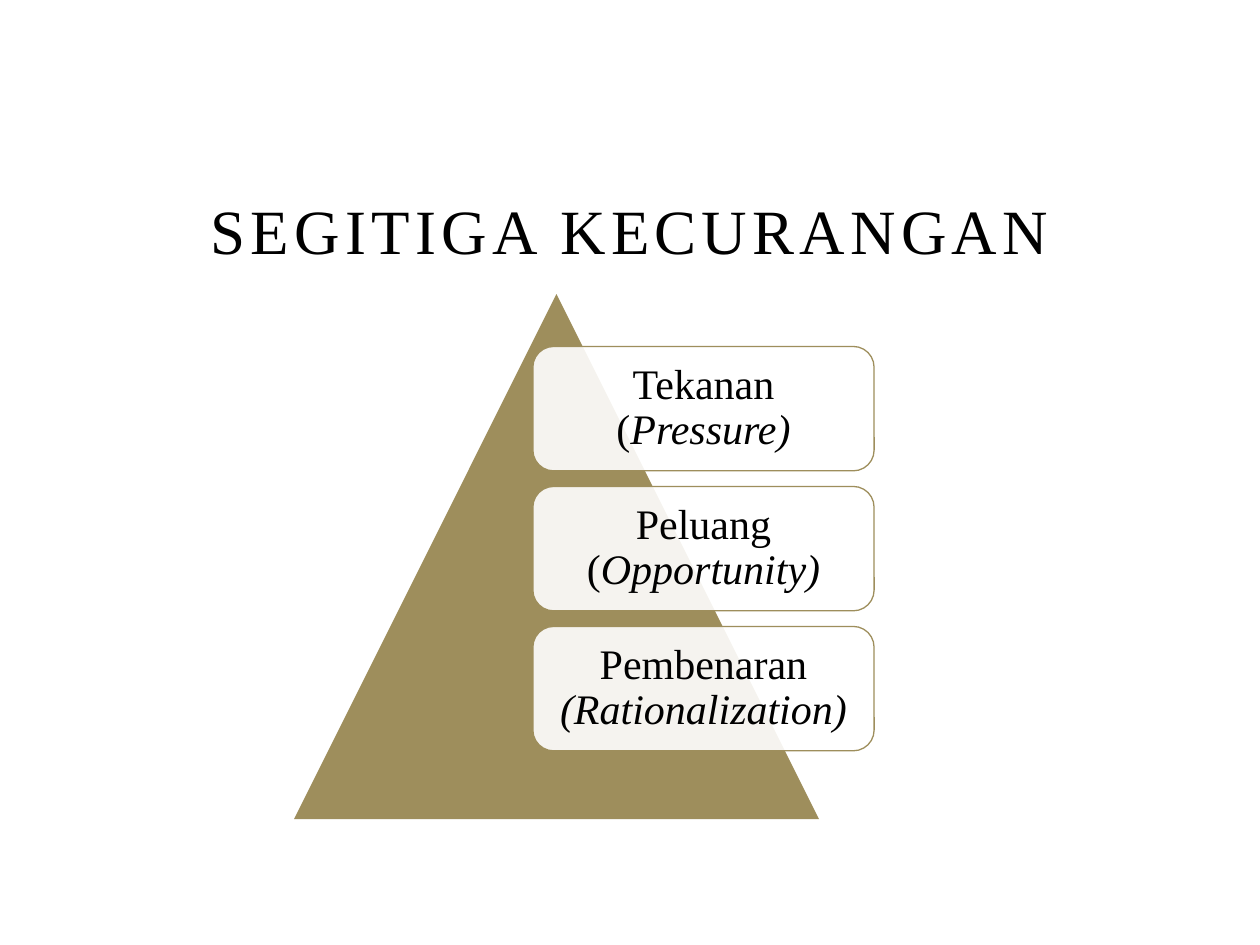
from dataclasses import dataclass

from lxml import etree
from pptx import Presentation
from pptx.dml.color import RGBColor
from pptx.enum.shapes import MSO_SHAPE
from pptx.enum.text import MSO_ANCHOR, MSO_AUTO_SIZE, PP_ALIGN
from pptx.oxml.ns import qn
from pptx.shapes.autoshape import Shape
from pptx.shapes.shapetree import GroupShapes
from pptx.slide import Slide
from pptx.text.text import Font
from pptx.util import Pt

TRIANGLE = MSO_SHAPE.ISOSCELES_TRIANGLE
ROUNDED_RECTANGLE = MSO_SHAPE.ROUNDED_RECTANGLE
BOTTOM = MSO_ANCHOR.BOTTOM
MIDDLE = MSO_ANCHOR.MIDDLE
CENTER = PP_ALIGN.CENTER
NO_AUTOFIT = MSO_AUTO_SIZE.NONE

BLACK = RGBColor(0x00, 0x00, 0x00)
WHITE = RGBColor(0xFF, 0xFF, 0xFF)
OLIVE = RGBColor(0x9E, 0x8E, 0x5C)
FONT_NAME = "Times New Roman"

TRIANGLE_LEFT = 168
TRIANGLE_TOP = 168
TRIANGLE_SIZE = 300
CARD_LEFT = 304.5
CARD_TOP = 198
CARD_WIDTH = 195
CARD_HEIGHT = 71.1
CARD_PITCH = 80
CARD_INSET = 7.2
CARD_OPACITY = 90


@dataclass
class Factor:
    name: str
    term: str


FACTORS = [
    Factor("Tekanan (", "Pressure)"),
    Factor("Peluang (", "Opportunity)"),
    Factor("Pembenaran ", "(Rationalization)"),
]


def format_font(font: Font, size: float) -> None:
    font.name = FONT_NAME
    font.size = Pt(size)
    font.color.rgb = BLACK


def set_opacity(shape: Shape, percent: int) -> None:
    color = shape.fill._xPr.find(qn("a:solidFill"))[0]
    etree.SubElement(color, qn("a:alpha")).set("val", str(percent * 1000))


def format_title(slide: Slide) -> None:
    title = slide.shapes.title
    title.left, title.top = Pt(108), Pt(102.2)
    title.width, title.height = Pt(504), Pt(54)
    text_frame = title.text_frame
    text_frame.text = "SEGITIGA KECURANGAN"
    text_frame.word_wrap = True
    text_frame.auto_size = NO_AUTOFIT
    text_frame.vertical_anchor = BOTTOM
    paragraph = text_frame.paragraphs[0]
    paragraph.alignment = CENTER
    run = paragraph.runs[0]
    format_font(run.font, 36)
    run.font._element.set("spc", "300")


def add_triangle(shapes: GroupShapes) -> None:
    triangle = shapes.add_shape(
        TRIANGLE, Pt(TRIANGLE_LEFT), Pt(TRIANGLE_TOP),
        Pt(TRIANGLE_SIZE), Pt(TRIANGLE_SIZE),
    )
    triangle.shadow.inherit = False
    triangle.fill.solid()
    triangle.fill.fore_color.rgb = OLIVE
    triangle.line.fill.background()


def add_card(shapes: GroupShapes, factor: Factor, top: float) -> None:
    card = shapes.add_shape(
        ROUNDED_RECTANGLE, Pt(CARD_LEFT), Pt(top), Pt(CARD_WIDTH), Pt(CARD_HEIGHT)
    )
    card.shadow.inherit = False
    card.fill.solid()
    card.fill.fore_color.rgb = WHITE
    set_opacity(card, CARD_OPACITY)
    card.line.color.rgb = OLIVE
    card.line.width = Pt(0.75)

    text_frame = card.text_frame
    text_frame.word_wrap = True
    text_frame.vertical_anchor = MIDDLE
    text_frame.margin_left = text_frame.margin_right = Pt(CARD_INSET)
    text_frame.margin_top = text_frame.margin_bottom = Pt(CARD_INSET)
    paragraph = text_frame.paragraphs[0]
    paragraph.alignment = CENTER
    paragraph.line_spacing = 0.9
    for text, italic in ((factor.name, False), (factor.term, True)):
        run = paragraph.add_run()
        run.text = text
        format_font(run.font, 24)
        run.font.italic = italic


def main() -> None:
    presentation = Presentation()
    presentation.slide_width = Pt(720)
    presentation.slide_height = Pt(540)
    slide = presentation.slides.add_slide(presentation.slide_layouts[5])
    format_title(slide)
    diagram = slide.shapes.add_group_shape()
    add_triangle(diagram.shapes)
    for index, factor in enumerate(FACTORS):
        add_card(diagram.shapes, factor, CARD_TOP + index * CARD_PITCH)
    presentation.save("out.pptx")


if __name__ == "__main__":
    main()
